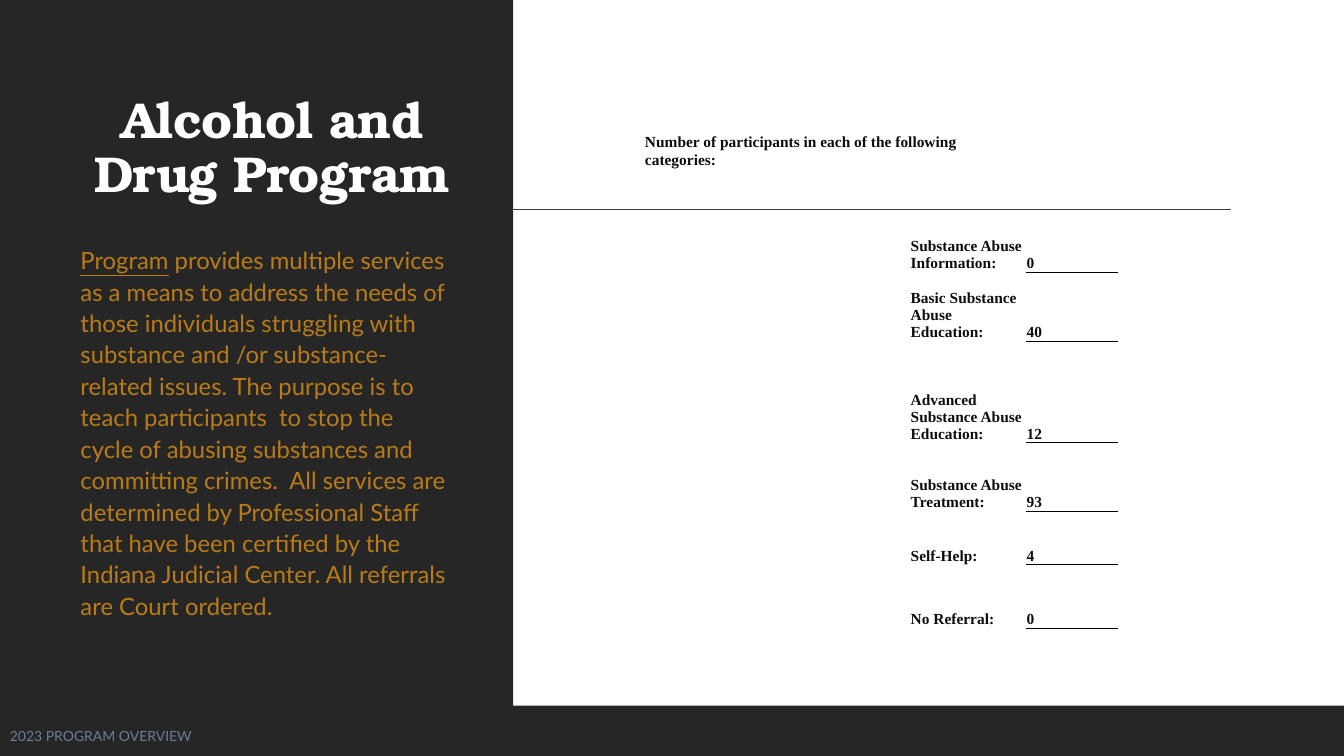
import pptx
import pptx.util
import pptx.dml.color
import pptx.enum.shapes
import pptx.enum.text
import pptx.oxml
import pptx.oxml.ns

Pt = pptx.util.Pt
ANCHOR = pptx.enum.text.MSO_ANCHOR
DARK = "262626"
NO_TABLE_STYLE = "{2D5ABB26-0587-4C30-8999-92F81FD0307C}"

COLUMN_WIDTHS = [3.6, 42.5, 77, 29.5, 36.7, 82.8, 66.3]
ROW_HEIGHTS = [27.4, 31, 25.2, 49, 49, 72.7, 49, 38.2, 45.4]
LABEL_COLUMN, COUNT_COLUMN, FIRST_CATEGORY_ROW = 5, 6, 3
TABLE_HEADING = "Number of participants in each of the following categories:"
PARTICIPANTS = [
    ("Substance Abuse Information:", "0"),
    ("Basic Substance Abuse Education:", "40"),
    ("Advanced Substance Abuse Education:", "12"),
    ("Substance Abuse Treatment:", "93"),
    ("Self-Help:", "4"),
    ("No Referral:", "0"),
]
PROGRAM_TEXT = (
    " provides multiple services as a means to address the needs of those "
    "individuals struggling with substance and /or substance-related issues. "
    "The purpose is to teach participants  to stop the cycle of abusing "
    "substances and committing crimes.  All services are determined by "
    "Professional Staff that have been certified by the Indiana Judicial "
    "Center. All referrals are Court ordered."
)


def rgb(value):
    return pptx.dml.color.RGBColor.from_string(value)


def style_run(r, name, size, color, bold=False):
    r.font.name = name
    r.font.size = Pt(size)
    r.font.color.rgb = rgb(color)
    r.font.bold = bold


def add_panel(s, x, y, w, h):
    sp = s.shapes.add_shape(pptx.enum.shapes.MSO_SHAPE.RECTANGLE,
                            Pt(x), Pt(y), Pt(w), Pt(h))
    sp.shadow.inherit = False
    sp.fill.solid()
    sp.fill.fore_color.rgb = rgb(DARK)
    sp.line.fill.background()


def add_rule(s, x, y, w):
    line = s.shapes.add_connector(pptx.enum.shapes.MSO_CONNECTOR.STRAIGHT,
                                  Pt(x), Pt(y), Pt(x + w), Pt(y))
    line.line.color.rgb = rgb("404040")
    line.line.width = Pt(1)
    line._element.spPr.append(pptx.oxml.parse_xml(
        "<a:effectLst %s/>" % pptx.oxml.ns.nsdecls("a")))


def add_text_box(s, x, y, w, h, anchor):
    tf = s.shapes.add_textbox(Pt(x), Pt(y), Pt(w), Pt(h)).text_frame
    tf.word_wrap = True
    tf.vertical_anchor = anchor
    return tf


def add_title(s, x, y, w, h):
    sp = s.shapes.title
    sp.left, sp.top, sp.width, sp.height = Pt(x), Pt(y), Pt(w), Pt(h)
    s.shapes._spTree.append(sp._element)  # in front of the dark panel
    tf = sp.text_frame
    tf.text = "Alcohol and Drug Program"
    tf.word_wrap = True
    tf.auto_size = pptx.enum.text.MSO_AUTO_SIZE.NONE
    tf.vertical_anchor = ANCHOR.BOTTOM
    p = tf.paragraphs[0]
    p.alignment = pptx.enum.text.PP_ALIGN.CENTER
    p.line_spacing = 0.9
    p.space_before = Pt(0)
    r = p.runs[0]
    style_run(r, "TeX Gyre Bonum", 36, "FFFFFF", bold=True)
    r.font._element.set("spc", "-50")


def add_description(s, x, y, w, h):
    p = add_text_box(s, x, y, w, h, ANCHOR.TOP).paragraphs[0]
    p.line_spacing = 1.1
    for text, underline in (("Program", True), (PROGRAM_TEXT, False)):
        r = p.add_run()
        r.text = text
        style_run(r, "Lato", 17, "B97B16")
        r.font.underline = underline


def add_footer(s, x, y, w, h):
    tf = add_text_box(s, x, y, w, h, ANCHOR.MIDDLE)
    tf.text = "2023 PROGRAM OVERVIEW"
    style_run(tf.paragraphs[0].runs[0], "Lato", 10, "6A7D93")


def fill_cell(cell, text):
    cell.text = text
    style_run(cell.text_frame.paragraphs[0].runs[0],
              "Times New Roman", 11, "0D0D0D", bold=True)


def add_border(cell, side):
    # Borders come before the fill in the cell properties
    border = pptx.oxml.parse_xml(
        '<a:%s %s w="6350"><a:solidFill><a:srgbClr val="000000"/></a:solidFill>'
        "</a:%s>" % (side, pptx.oxml.ns.nsdecls("a"), side))
    tc_pr = cell._tc.get_or_add_tcPr()
    tc_pr.insert(len(tc_pr) - 1, border)


def add_participants_table(s, x, y):
    table = s.shapes.add_table(
        len(ROW_HEIGHTS), len(COLUMN_WIDTHS), Pt(x), Pt(y),
        Pt(sum(COLUMN_WIDTHS)), Pt(sum(ROW_HEIGHTS))).table
    table.first_row = table.horz_banding = False
    style = table._tbl.tblPr.find(pptx.oxml.ns.qn("a:tableStyleId"))
    style.text = NO_TABLE_STYLE
    for column, width in zip(table.columns, COLUMN_WIDTHS):
        column.width = Pt(width)
    for row, height in zip(table.rows, ROW_HEIGHTS):
        row.height = Pt(height)
    for cell in table.iter_cells():
        cell.margin_left = cell.margin_right = cell.margin_top = Pt(0.7)
        cell.margin_bottom = Pt(0)
        cell.vertical_anchor = ANCHOR.BOTTOM
        cell.fill.background()

    # Merged cells
    table.cell(0, 0).merge(table.cell(0, 1))
    table.cell(0, 3).merge(table.cell(0, 4))
    table.cell(1, 0).merge(table.cell(1, 5))
    for row in range(2, len(ROW_HEIGHTS)):
        table.cell(row, 2).merge(table.cell(row, 3))

    # Heading, then one row per category
    fill_cell(table.cell(1, 0), TABLE_HEADING)
    for row, (label, count) in enumerate(PARTICIPANTS, FIRST_CATEGORY_ROW):
        fill_cell(table.cell(row, LABEL_COLUMN), label)
        count_cell = table.cell(row, COUNT_COLUMN)
        fill_cell(count_cell, count)
        if row > FIRST_CATEGORY_ROW:
            add_border(count_cell, "lnT")
        add_border(count_cell, "lnB")


def main():
    prs = pptx.Presentation()
    prs.slide_width, prs.slide_height = Pt(960), Pt(540)
    s = prs.slides.add_slide(prs.slide_layouts[5])

    # Background panels and rule
    add_panel(s, 0, 504, 960, 36)
    add_rule(s, 94.3, 149.5, 784.8)
    add_panel(s, 0, 0, 366.5, 540)

    # Content
    add_title(s, 50.4, 51.1, 288, 98)
    add_participants_table(s, 460, 62)
    add_description(s, 50.4, 170, 277.2, 311)
    add_footer(s, 0, 511.2, 420, 28.8)
    prs.save("out.pptx")


if __name__ == "__main__":
    main()
